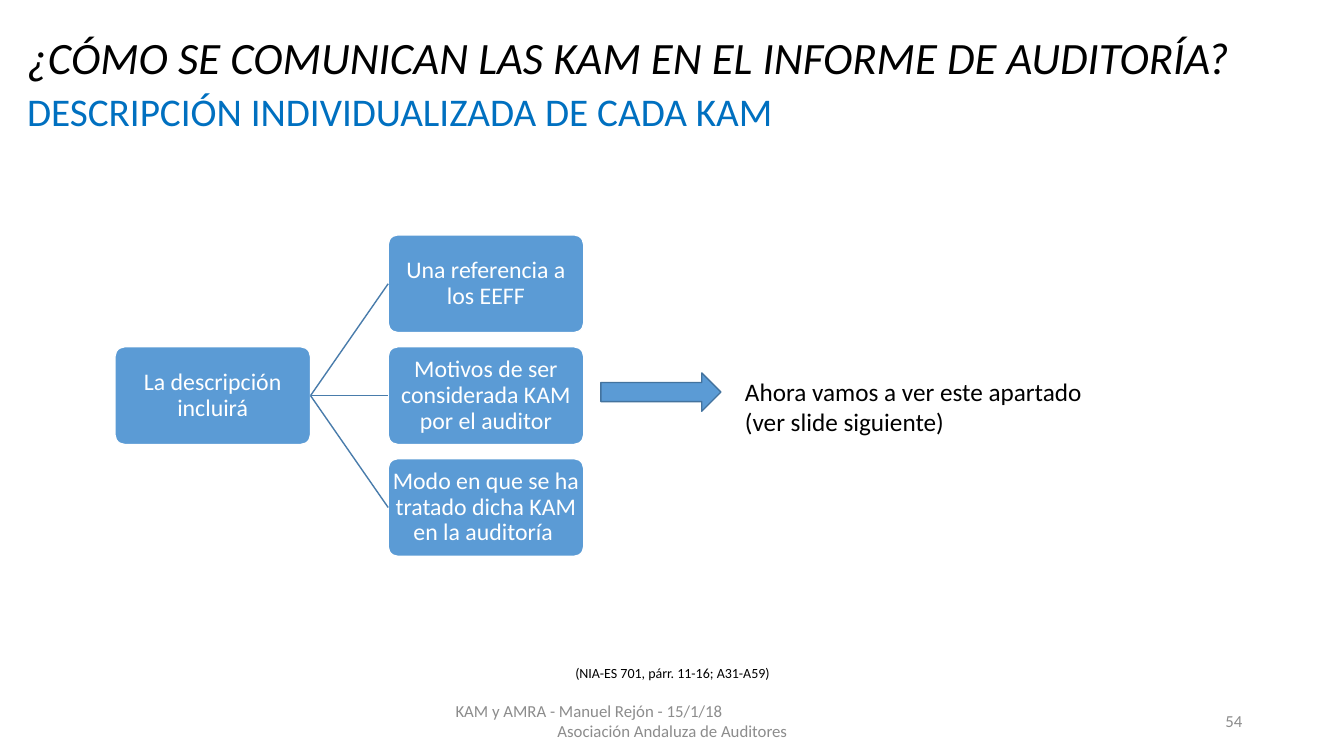
from dataclasses import dataclass

from lxml.etree import SubElement
from pptx import Presentation
from pptx.dml.color import RGBColor
from pptx.enum.shapes import MSO_CONNECTOR as Connector, MSO_SHAPE as Shape
from pptx.enum.text import MSO_ANCHOR as Anchor, MSO_AUTO_SIZE as AutoSize, PP_ALIGN as Align
from pptx.oxml.ns import qn
from pptx.util import Inches, Pt

HEADING = "¿CÓMO SE COMUNICAN LAS KAM EN EL INFORME DE AUDITORÍA?"
SUBHEADING = "DESCRIPCIÓN INDIVIDUALIZADA DE CADA KAM"
ROOT = "La descripción incluirá"
BRANCHES = [
    "Una referencia a los EEFF",
    "Motivos de ser considerada KAM por el auditor",
    "Modo en que se ha tratado dicha KAM en la auditoría ",
]
REMARK = ["Ahora vamos a ver este apartado", "(ver slide siguiente)"]
REFERENCE = "(NIA-ES 701, párr. 11-16; A31-A59)"
FOOTER = ["KAM y AMRA - Manuel Rejón - 15/1/18", "Asociación Andaluza de Auditores"]
PAGE = "54"


@dataclass(frozen=True)
class Theme:
    font: str = "Calibri"
    ink: str = "000000"
    accent: str = "0070C0"
    box: str = "5B9BD5"
    box_text: str = "FFFFFF"
    link: str = "497CAB"
    arrow_edge: str = "43739E"
    muted: str = "8C8C8C"
    heading: int = 32
    subheading: int = 28
    remark: int = 18
    node: int = 17
    footer: int = 12
    reference: int = 10


THEME = Theme()
NODE_W, NODE_H, NODE_STEP, NODE_INSET = 1.94, 0.97, 1.11, 0.01
ROOT_X, BRANCH_X, BRANCH_TOP = 1.14, 3.85, 2.33


def rgb(value):
    return RGBColor.from_string(value)


def write(frame, lines, size, color, aligns=(Align.LEFT,), anchor=Anchor.TOP):
    frame.text = "\n".join(lines)
    frame.word_wrap = True
    frame.auto_size = AutoSize.NONE
    frame.vertical_anchor = anchor
    for index, paragraph in enumerate(frame.paragraphs):
        paragraph.alignment = aligns[min(index, len(aligns) - 1)]
        paragraph.font.name = THEME.font
        paragraph.font.size = Pt(size)
        paragraph.font.color.rgb = rgb(color)


def add_text(slide, place, *args, **options):
    area = slide.shapes.add_textbox(*map(Inches, place))
    write(area.text_frame, *args, **options)


def add_block(slide, kind, place, edge):
    block = slide.shapes.add_shape(kind, *map(Inches, place))
    block.shadow.inherit = False
    block.fill.solid()
    block.fill.fore_color.rgb = rgb(THEME.box)
    block.line.color.rgb = rgb(edge)
    block.line.width = Pt(1)
    return block


def add_node(slide, text, left, top):
    node = add_block(slide, Shape.ROUNDED_RECTANGLE, (left, top, NODE_W, NODE_H), THEME.box_text)
    node.adjustments[0] = 0.1
    frame = node.text_frame
    write(frame, [text], THEME.node, THEME.box_text, (Align.CENTER,), Anchor.MIDDLE)
    frame.margin_left = frame.margin_right = Inches(NODE_INSET)
    frame.margin_top = frame.margin_bottom = Inches(NODE_INSET)
    frame.paragraphs[0].line_spacing = 0.9
    return node


def add_link(slide, start, end):
    link = slide.shapes.add_connector(Connector.STRAIGHT, 0, 0, 0, 0)
    link.begin_connect(start, 3)
    link.end_connect(end, 1)
    link.line.color.rgb = rgb(THEME.link)
    link.line.width = Pt(1)
    SubElement(link._element.spPr, qn("a:effectLst"))


def main():
    deck = Presentation()
    deck.slide_width, deck.slide_height = Inches(13.33), Inches(7.5)
    slide = deck.slides.add_slide(deck.slide_layouts[5])

    heading = slide.shapes.title
    heading.left, heading.top = Inches(0.17), Inches(0.3)
    heading.width, heading.height = Inches(12.24), Inches(0.65)
    write(heading.text_frame, [HEADING], THEME.heading, THEME.ink)
    opening = heading.text_frame.paragraphs[0]
    opening.font.italic = True
    opening.line_spacing = 0.9
    opening.space_before = Pt(10)
    add_text(slide, (0.17, 0.82, 12.28, 0.57), [SUBHEADING], THEME.subheading, THEME.accent)

    middle_top = BRANCH_TOP + NODE_STEP * (len(BRANCHES) - 1) / 2
    root = add_node(slide, ROOT, ROOT_X, middle_top)
    for row, text in enumerate(BRANCHES):
        branch = add_node(slide, text, BRANCH_X, BRANCH_TOP + row * NODE_STEP)
        add_link(slide, root, branch)

    add_block(slide, Shape.RIGHT_ARROW, (5.96, 3.7, 1.19, 0.38), THEME.arrow_edge)
    add_text(slide, (7.29, 3.68, 4.25, 0.71), REMARK, THEME.remark, THEME.ink)
    add_text(slide, (5.32, 6.54, 2.7, 0.27), [REFERENCE], THEME.reference, THEME.ink,
             aligns=(Align.CENTER,))
    add_text(slide, (4.42, 6.95, 4.5, 0.4), FOOTER, THEME.footer, THEME.muted,
             aligns=(Align.LEFT, Align.CENTER), anchor=Anchor.MIDDLE)
    add_text(slide, (9.42, 6.95, 3, 0.4), [PAGE], THEME.footer, THEME.muted,
             aligns=(Align.RIGHT,), anchor=Anchor.MIDDLE)
    deck.save("out.pptx")


if __name__ == "__main__":
    main()
